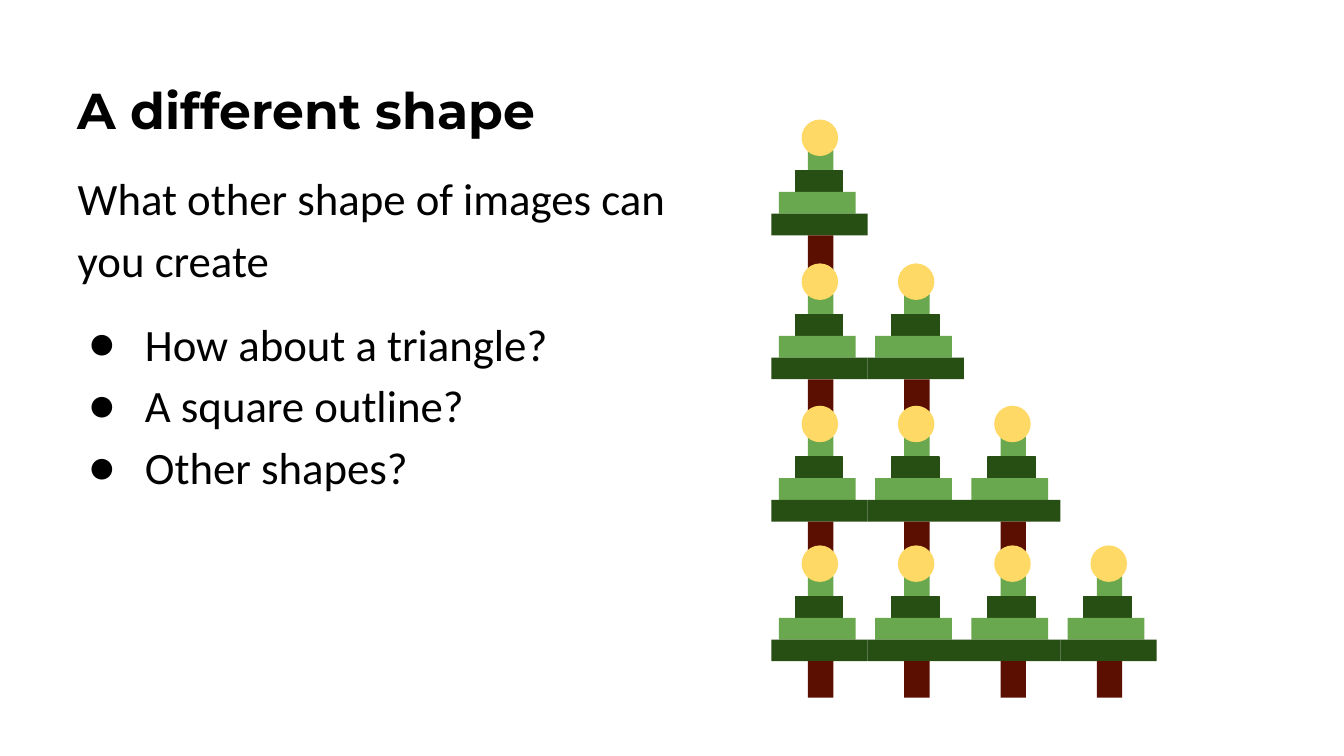
from dataclasses import dataclass

from lxml.etree import SubElement
from pptx import Presentation
from pptx.dml.color import RGBColor
from pptx.enum.shapes import MSO_SHAPE
from pptx.oxml.ns import qn
from pptx.util import Cm, Pt


@dataclass(frozen=True)
class Theme:
    text: str = "000000"
    light: str = "6AA84F"
    dark: str = "274E13"
    trunk: str = "5B0F00"
    star: str = "FFD966"
    title_font: str = "Montserrat"
    body_font: str = "Calibri"
    title_size: int = 27
    body_size: int = 24


@dataclass(frozen=True)
class Part:
    left: float
    top: float
    width: float
    height: float
    color: str
    kind: MSO_SHAPE = MSO_SHAPE.RECTANGLE
    outlined: bool = False


THEME = Theme()
TREE = [
    Part(0.69, 0.58, 0.48, 0.41, THEME.light),
    Part(0.45, 0.97, 0.90, 0.41, THEME.dark, outlined=True),
    Part(0.14, 1.37, 1.45, 0.41, THEME.light),
    Part(0, 1.78, 1.82, 0.41, THEME.dark),
    Part(0.69, 2.19, 0.48, 0.69, THEME.trunk),
    Part(0.57, 0, 0.69, 0.69, THEME.star, MSO_SHAPE.OVAL),
]
FOREST_LEFT = 14.58
TREE_PITCH = 1.82
ROW_TOPS = [2.26, 4.98, 7.67, 10.31]
BULLETS = ["How about a triangle?", "A square outline?", "Other shapes?"]


def add_text_box(slide, left: float, top: float, width: float, height: float):
    tf = slide.shapes.add_textbox(Cm(left), Cm(top), Cm(width), Cm(height)).text_frame
    tf.word_wrap = True
    tf.margin_left = tf.margin_right = tf.margin_top = tf.margin_bottom = Cm(0.25)
    return tf


def format_runs(p, font: str, size: int, bold: bool = False) -> None:
    for r in p.runs:
        r.font.name = font
        r.font.size = Pt(size)
        r.font.bold = bold
        r.font.color.rgb = RGBColor.from_string(THEME.text)


def add_bullet(p) -> None:
    pPr = p._p.get_or_add_pPr()
    pPr.set("marL", str(Cm(1.27)))
    pPr.set("indent", str(-Cm(1.07)))
    color = SubElement(pPr, qn("a:buClr"))
    SubElement(color, qn("a:srgbClr"), val=THEME.text)
    SubElement(pPr, qn("a:buSzPts"), val=str(THEME.body_size * 100))
    SubElement(pPr, qn("a:buFont"), typeface=THEME.body_font)
    SubElement(pPr, qn("a:buChar"), char="●")


def add_body(slide) -> None:
    tf = add_text_box(slide, 1.22, 2.82, 11.79, 9.45)
    tf.text = "\n".join(["What other shape of images can you create", *BULLETS])
    for i, p in enumerate(tf.paragraphs):
        p.line_spacing = 1.15
        if i == 1:
            p.space_before = Pt(12)
        if i > 0:
            add_bullet(p)
        format_runs(p, THEME.body_font, THEME.body_size)


def add_tree(slide, left: float, top: float) -> None:
    group = slide.shapes.add_group_shape()
    for part in TREE:
        sp = group.shapes.add_shape(
            part.kind, Cm(left + part.left), Cm(top + part.top), Cm(part.width), Cm(part.height)
        )
        sp.shadow.inherit = False
        color = RGBColor.from_string(part.color)
        sp.fill.solid()
        sp.fill.fore_color.rgb = color
        if part.outlined:
            sp.line.color.rgb = color
            sp.line.width = Pt(0.75)
        else:
            sp.line.fill.background()


def main() -> None:
    prs = Presentation()
    prs.slide_width, prs.slide_height = Cm(25.4), Cm(14.29)
    s = prs.slides.add_slide(prs.slide_layouts[6])

    title = add_text_box(s, 1.22, 1.24, 23.32, 1.73)
    title.text = "A different shape"
    format_runs(title.paragraphs[0], THEME.title_font, THEME.title_size, bold=True)
    add_body(s)

    for row, top in enumerate(ROW_TOPS):
        for column in range(row + 1):
            add_tree(s, FOREST_LEFT + column * TREE_PITCH, top)

    prs.save("out.pptx")


if __name__ == "__main__":
    main()
